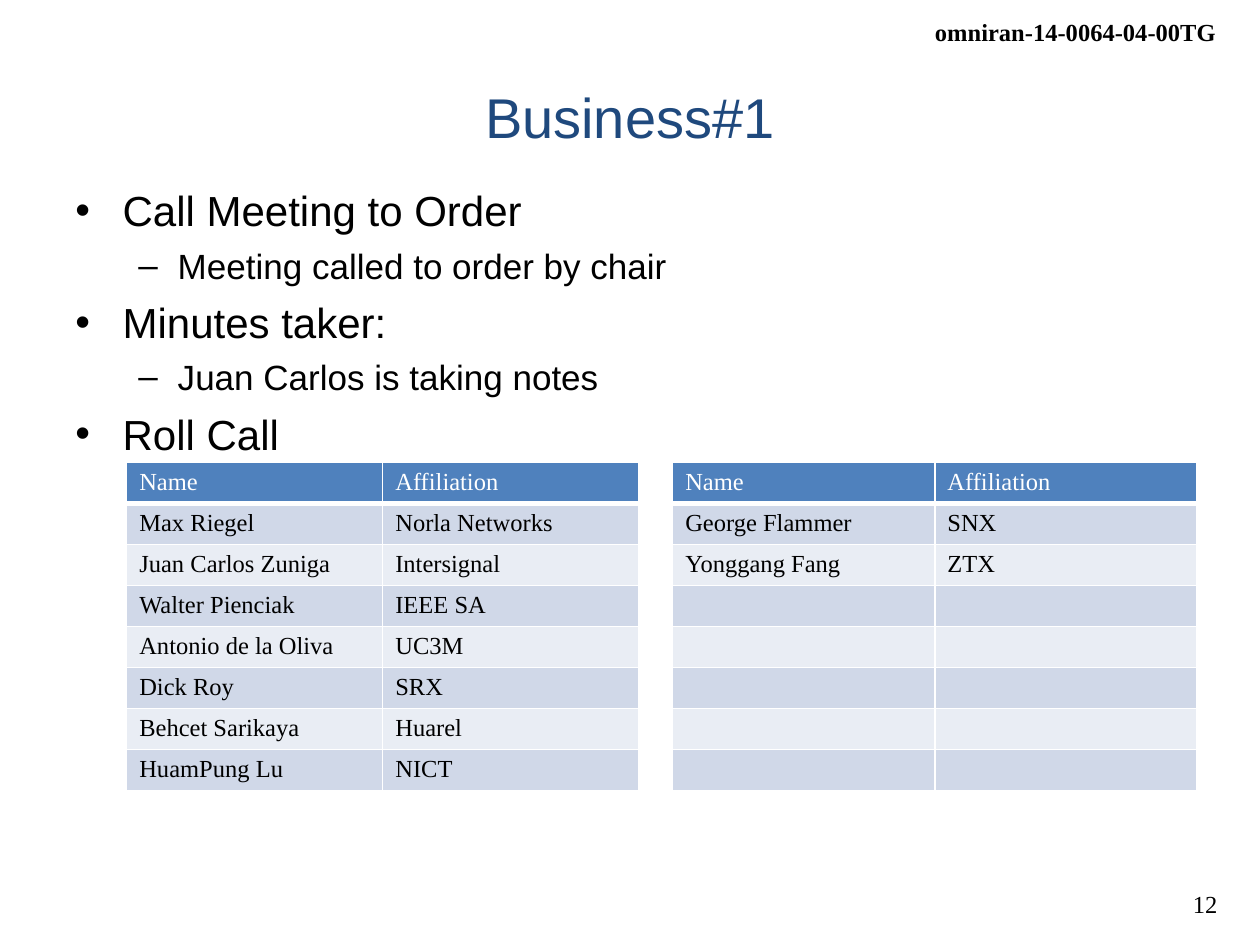
from typing import NamedTuple

from lxml.etree import SubElement
from pptx import Presentation
from pptx.dml.color import RGBColor
from pptx.enum.text import MSO_ANCHOR as Anchor, PP_ALIGN as Align
from pptx.oxml.ns import qn
from pptx.util import Pt

BLACK = RGBColor(0x00, 0x00, 0x00)
WHITE = RGBColor(0xFF, 0xFF, 0xFF)
NAVY = RGBColor(0x1F, 0x49, 0x7D)
BLUE = RGBColor(0x4F, 0x81, 0xBD)
DARK = RGBColor(0xD0, 0xD8, 0xE8)
LIGHT = RGBColor(0xE9, 0xED, 0xF4)
SANS = "Arial"
SERIF = "Times New Roman"


class Style(NamedTuple):
    size: float
    face: str
    color: RGBColor
    bold: bool = False


class Label(NamedTuple):
    text: str
    box: tuple
    style: Style
    align: Align
    wrap: bool


class Level(NamedTuple):
    mark: str
    left: float
    hang: float
    before: float
    style: Style


class Point(NamedTuple):
    text: str
    level: int


class Person(NamedTuple):
    name: str
    group: str


LABELS = [
    Label("omniran-14-0064-04-00TG", (525.6, 5.8, 176.4, 24.5),
          Style(14, SERIF, BLACK, True), Align.RIGHT, False),
    Label("12", (671.8, 504, 31, 24.5),
          Style(14, SERIF, BLACK), Align.RIGHT, False),
    Label("Business#1", (36, 21.6, 648, 90),
          Style(32, SANS, NAVY), Align.CENTER, True),
]
LEVELS = [
    Level("•", 27, 27, 6, Style(24, SANS, BLACK)),
    Level("–", 58.5, 22.5, 5, Style(20, SANS, BLACK)),
]
POINTS = [
    Point("Call Meeting to Order", 0),
    Point("Meeting called to order by chair", 1),
    Point("Minutes taker:", 0),
    Point("Juan Carlos is taking notes", 1),
    Point("Roll Call", 0),
]
HEAD = Person("Name", "Affiliation")
LEFT = [
    HEAD,
    Person("Max Riegel", "Norla Networks"),
    Person("Juan Carlos Zuniga", "Intersignal"),
    Person("Walter Pienciak", "IEEE SA"),
    Person("Antonio de la Oliva", "UC3M"),
    Person("Dick Roy", "SRX"),
    Person("Behcet Sarikaya", "Huarel"),
    Person("HuamPung Lu", "NICT"),
]
RIGHT = [HEAD, Person("George Flammer", "SNX"), Person("Yonggang Fang", "ZTX")]
WIDTHS = [146.3, 146.3, 19.4, 149.8, 149.8]
GAP = 2
ROW = 22.9


def add_run(para, text: str, style: Style) -> None:
    run = para.add_run()
    run.text = text
    font = run.font
    font.size, font.name, font.bold = Pt(style.size), style.face, style.bold
    font.color.rgb = style.color


def add_frame(slide, box: tuple, wrap: bool = True):
    frame = slide.shapes.add_textbox(*map(Pt, box)).text_frame
    frame.word_wrap = wrap
    return frame


def draw_label(slide, label: Label) -> None:
    frame = add_frame(slide, label.box, label.wrap)
    frame.vertical_anchor = Anchor.MIDDLE
    para = frame.paragraphs[0]
    para.alignment = label.align
    add_run(para, label.text, label.style)


def draw_points(slide, points: list[Point]) -> None:
    frame = add_frame(slide, (36, 102.2, 648, 203.8))
    for i, point in enumerate(points):
        para = frame.add_paragraph() if i else frame.paragraphs[0]
        level = LEVELS[point.level]
        para.level = point.level
        para.space_before = Pt(level.before)
        props = para._p.get_or_add_pPr()
        props.set("marL", str(Pt(level.left)))
        props.set("indent", str(-Pt(level.hang)))
        SubElement(props, qn("a:buFont"), typeface=SANS)
        SubElement(props, qn("a:buChar"), char=level.mark)
        add_run(para, point.text, level.style)


def set_edges(cell, base: float) -> None:
    props = cell._tc.get_or_add_tcPr()
    for side, width in zip("LRTB", (1, 1, 1, base)):
        line = SubElement(props, qn(f"a:ln{side}"), w=str(Pt(width)))
        fill = SubElement(line, qn("a:solidFill"))
        SubElement(fill, qn("a:srgbClr"), val=str(WHITE))


def fill_cell(cell, text: str, back: RGBColor, style: Style, base: float) -> None:
    cell.margin_top = cell.margin_bottom = Pt(3.3)
    set_edges(cell, base)
    cell.fill.solid()
    cell.fill.fore_color.rgb = back
    para = cell.text_frame.paragraphs[0]
    if text:
        add_run(para, text, style)
    else:
        SubElement(para._p, qn("a:endParaRPr"), sz=str(style.size * 100))


def draw_roll(slide, left: list[Person], right: list[Person]) -> None:
    count = len(left)
    blank = Person("", "")
    full = right + [blank] * (count - len(right))
    table = slide.shapes.add_table(
        count, len(WIDTHS), Pt(72.4), Pt(264.4),
        Pt(sum(WIDTHS)), Pt(ROW * count)).table
    for col, width in zip(table.columns, WIDTHS):
        col.width = Pt(width)
    for r, (one, two) in enumerate(zip(left, full)):
        table.rows[r].height = Pt(ROW)
        band = BLUE if r == 0 else DARK if r % 2 else LIGHT
        style = Style(14, SERIF, BLACK if r else WHITE)
        for c, text in enumerate((*one, "", *two)):
            back = WHITE if c == GAP else band
            fill_cell(table.cell(r, c), text, back, style, 1 if r else 3)


def main() -> None:
    deck = Presentation()
    deck.slide_width, deck.slide_height = Pt(720), Pt(540)
    slide = deck.slides.add_slide(deck.slide_layouts[6])
    for label in LABELS:
        draw_label(slide, label)
    draw_points(slide, POINTS)
    draw_roll(slide, LEFT, RIGHT)
    deck.save("out.pptx")


if __name__ == "__main__":
    main()
